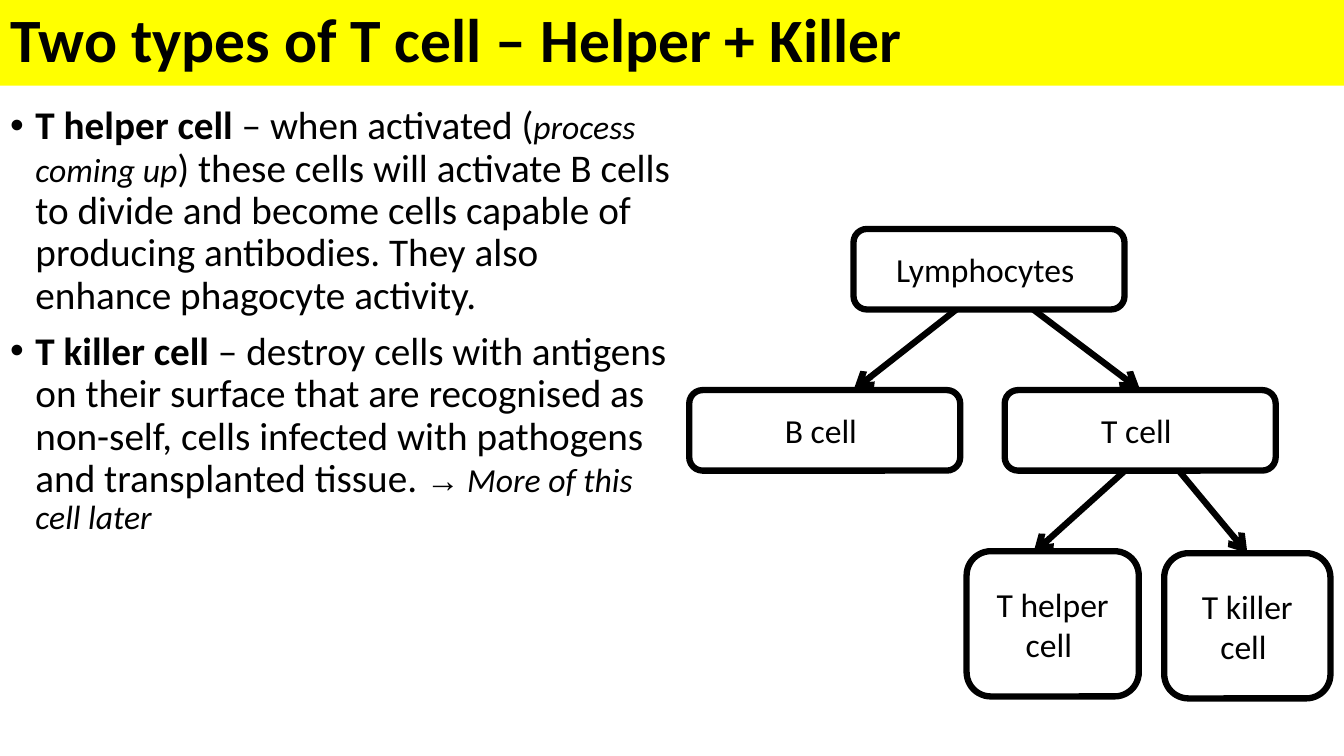
import lxml.etree
import pptx
import pptx.util
import pptx.dml.color
import pptx.enum.shapes
import pptx.enum.text
import pptx.oxml.ns

Cm, Pt = pptx.util.Cm, pptx.util.Pt
SHAPE = pptx.enum.shapes.MSO_SHAPE
ANCHOR = pptx.enum.text.MSO_ANCHOR
ALIGN = pptx.enum.text.PP_ALIGN
qn = pptx.oxml.ns.qn

COLORS = {"ink": "000000", "band": "FFFF00", "page": "FFFFFF"}
TITLE = "Two types of T cell – Helper + Killer"

# Each run: text, size, style, font
BODY = [
    [("T helper cell ", 28, "bold", "Calibri"),
     ("– when activated (", 28, "", "Calibri"),
     ("process coming up", 24, "italic", "Calibri"),
     (") these cells will activate B cells to divide and become cells capable "
      "of producing antibodies. They also enhance phagocyte activity.",
      28, "", "Calibri")],
    [("T killer cell ", 28, "bold", "Calibri"),
     ("– destroy cells with antigens on their surface that are recognised as "
      "non-self, cells infected with pathogens and transplanted tissue. ",
      28, "", "Calibri"),
     ("→", 24, "italic", "Arial"),
     (" More of this cell later", 24, "italic", "Calibri")],
]

# Label: left, top, width, height in cm
BOXES = {
    "Lymphocytes ": (21.51, 5.77, 6.83, 2.03),
    "T cell ": (25.32, 9.83, 6.83, 2.03),
    "B cell ": (17.37, 9.83, 6.83, 2.03),
    "T helper cell ": (24.36, 13.89, 4.34, 3.66),
    "T killer cell ": (29.34, 13.94, 4.19, 3.66),
}

# Start, end in cm, and the box whose top middle the arrow joins
ARROWS = [
    ((26.04, 7.8), (28.73, 9.83), "T cell "),
    ((24.1, 7.8), (21.51, 9.83), None),
    ((29.69, 11.84), (31.43, 13.94), "T killer cell "),
    ((28.35, 11.86), (26.04, 13.94), None),
]


def color(name):
    return pptx.dml.color.RGBColor.from_string(COLORS[name])


def style(font, size, face="Calibri"):
    font.size, font.name = Pt(size), face
    font.color.rgb = color("ink")


def place(shape, *area):
    shape.left, shape.top, shape.width, shape.height = map(Cm, area)


def draw_line(line):
    line.color.rgb = color("ink")
    line.width = Pt(4.5)


def add_title(slide):
    title = slide.shapes.title
    place(title, 0, 0, 33.87, 2.16)
    title.fill.solid()
    title.fill.fore_color.rgb = color("band")
    frame = title.text_frame
    frame.text = TITLE
    frame.auto_size = pptx.enum.text.MSO_AUTO_SIZE.NONE
    frame.vertical_anchor = ANCHOR.MIDDLE
    para = frame.paragraphs[0]
    para.alignment, para.line_spacing = ALIGN.LEFT, 0.9
    style(para.font, 44)
    para.font.bold = True


def add_body(slide):
    body = slide.placeholders[1]
    place(body, 0, 2.54, 17.15, 12.09)
    frame = body.text_frame
    frame.auto_size = pptx.enum.text.MSO_AUTO_SIZE.NONE
    for i, runs in enumerate(BODY):
        para = frame.paragraphs[0] if i == 0 else frame.add_paragraph()
        para.line_spacing, para.space_before = 0.9, Pt(10)
        props = para._p.get_or_add_pPr()
        props.set("marL", str(Cm(0.64)))
        props.set("indent", str(Cm(-0.64)))
        for text, size, look, face in runs:
            run = para.add_run()
            run.text = text
            style(run.font, size, face)
            run.font.bold = look == "bold"
            run.font.italic = look == "italic"


def add_box(slide, label, area):
    box = slide.shapes.add_shape(SHAPE.ROUNDED_RECTANGLE, *map(Cm, area))
    box.shadow.inherit = False
    box.fill.background()
    draw_line(box.line)
    frame = box.text_frame
    frame.text = label
    frame.word_wrap = True
    frame.vertical_anchor = ANCHOR.MIDDLE
    para = frame.paragraphs[0]
    para.alignment = ALIGN.CENTER
    style(para.font, 24)
    return box


def add_arrow(slide, start, end, target):
    kind = pptx.enum.shapes.MSO_CONNECTOR.STRAIGHT
    arrow = slide.shapes.add_connector(kind, *map(Cm, start + end))
    if target is not None:
        arrow.end_connect(target, 0)
    draw_line(arrow.line)
    props = arrow._element.find(qn("p:spPr"))
    line = props.find(qn("a:ln"))
    lxml.etree.SubElement(line, qn("a:tailEnd"), type="arrow")
    lxml.etree.SubElement(props, qn("a:effectLst"))


def main():
    deck = pptx.Presentation()
    deck.slide_width, deck.slide_height = Cm(33.87), Cm(19.05)
    slide = deck.slides.add_slide(deck.slide_layouts[1])
    slide.background.fill.solid()
    slide.background.fill.fore_color.rgb = color("page")
    add_title(slide)
    add_body(slide)
    boxes = {label: add_box(slide, label, area)
             for label, area in BOXES.items()}
    for start, end, label in ARROWS:
        add_arrow(slide, start, end, boxes.get(label))
    deck.save("out.pptx")


if __name__ == "__main__":
    main()
